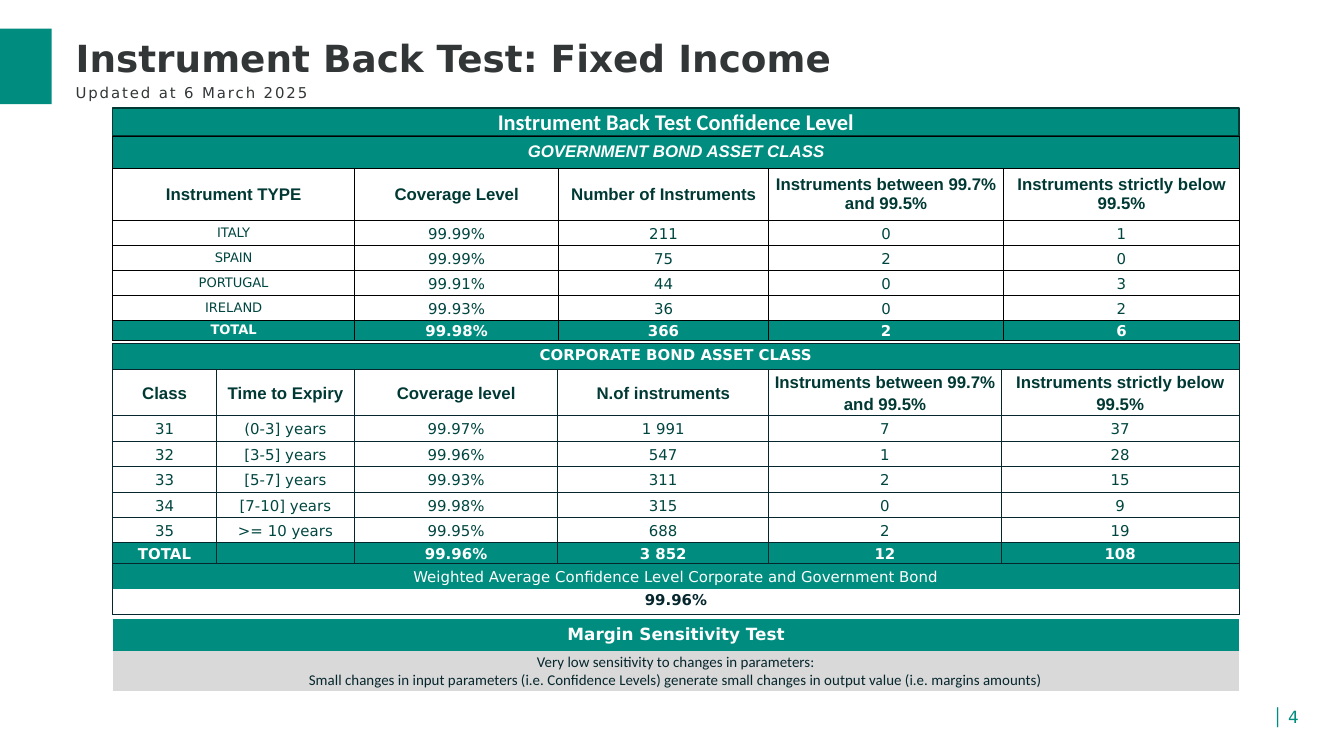
from lxml.etree import SubElement
from pptx import Presentation
from pptx.dml.color import RGBColor
from pptx.enum.shapes import MSO_SHAPE as Shape
from pptx.enum.text import MSO_ANCHOR as Anchor, PP_ALIGN as Align
from pptx.oxml.ns import qn
from pptx.util import Cm, Pt

color = RGBColor.from_string
TEAL, DARK_TEAL, BODY, NAVY = "008D7F", "003934", "004640", "06262D"
WHITE, GRAY, CHARCOAL = "FFFFFF", "D9D9D9", "323637"
SANS = "DejaVu Sans"
LEFT, WIDTH = 2.13, 21.29

presentation = Presentation()
presentation.slide_width, presentation.slide_height = Cm(25.4), Cm(14.29)
slide = presentation.slides.add_slide(presentation.slide_layouts[6])


def write(holder, frame, text, style):
    """Fill a text frame; holder (frame or cell) carries margins and anchor."""
    side = Cm(style.get("margin", 0))
    layout = {"margin_left": side, "margin_right": side, "margin_top": 0,
              "margin_bottom": 0,
              "vertical_anchor": style.get("anchor", Anchor.MIDDLE)}
    for name, value in layout.items():
        setattr(holder, name, value)
    frame.word_wrap = True
    for index, line in enumerate(text.split("\n")):
        paragraph = frame.add_paragraph() if index else frame.paragraphs[0]
        paragraph.alignment = style.get("align", Align.CENTER)
        if "spacing" in style:
            paragraph.line_spacing = style["spacing"]
        if not line:
            # Keeps an empty cell from growing its row
            SubElement(paragraph._p, qn("a:endParaRPr"), sz=str(style["size"] * 100))
            continue
        run = paragraph.add_run()
        run.text = line
        formats = {"size": Pt(style["size"]), "name": style.get("font", SANS),
                   "bold": style.get("bold", False), "italic": style.get("italic", False)}
        for name, value in formats.items():
            setattr(run.font, name, value)
        run.font.color.rgb = color(style["color"])
        if "tracking" in style:
            run._r.get_or_add_rPr().set("spc", str(style["tracking"]))


def add_table(top, widths, rows, border=None):
    """Rows are (height, first style, other style, fill, bordered sides, texts)."""
    height = sum(row[0] for row in rows)
    table = slide.shapes.add_table(len(rows), len(widths), Cm(LEFT), Cm(top),
                                   Cm(WIDTH), Cm(height)).table
    table.first_row = table.horz_banding = False
    for column, width in zip(table.columns, widths):
        column.width = Cm(width)
    for row_index, (height, first, other, fill, sides, texts) in enumerate(rows):
        table.rows[row_index].height = Cm(height)
        for column_index in range(len(widths)):
            cell = table.cell(row_index, column_index)
            properties = cell._tc.get_or_add_tcPr()
            for side in "LRTB":
                line = SubElement(properties, qn(f"a:ln{side}"), w=str(Pt(0.5)))
                if border and side in sides:
                    solid = SubElement(line, qn("a:solidFill"))
                    SubElement(solid, qn("a:srgbClr"), val=border)
                else:
                    SubElement(line, qn("a:noFill"))
            if fill:
                cell.fill.solid()
                cell.fill.fore_color.rgb = color(fill)
            else:
                cell.fill.background()
            if column_index < len(texts):
                write(cell, cell.text_frame, texts[column_index],
                      other if column_index else first)
        if len(texts) < len(widths):
            table.cell(row_index, 0).merge(table.cell(row_index, len(widths) - 1))


# Accent block and table heading bar
heading = {"size": 12, "font": "Calibri", "color": WHITE, "bold": True}
for left, top, width, height, text in [
        (0, 0.54, 0.98, 1.43, ""),
        (LEFT, 2.04, WIDTH, 0.53, "Instrument Back Test Confidence Level")]:
    shape = slide.shapes.add_shape(Shape.RECTANGLE, Cm(left), Cm(top), Cm(width), Cm(height))
    shape.shadow.inherit = False
    shape.fill.solid()
    shape.fill.fore_color.rgb = color(TEAL)
    if text:
        shape.line.color.rgb = color(DARK_TEAL)
        shape.line.width = Pt(0.75)
        write(shape.text_frame, shape.text_frame, text, heading)
    else:
        shape.line.fill.background()

# Title, date and page number
title = {"size": 20, "color": CHARCOAL, "bold": True, "align": Align.LEFT}
date = {"size": 8, "color": CHARCOAL, "tracking": 100, "align": Align.LEFT}
page = {"size": 9, "color": TEAL, "anchor": Anchor.TOP}
for left, top, width, height, text, style in [
        (1.43, 0.69, 22.5, 0.8, "Instrument Back Test: Fixed Income", title),
        (1.43, 1.45, 6, 0.6, "Updated at 6 March 2025", date),
        (23.65, 13.36, 1.3, 0.38, "│ 4", page)]:
    box = slide.shapes.add_textbox(Cm(left), Cm(top), Cm(width), Cm(height))
    write(box.text_frame, box.text_frame, text, style)

# Cell styles
header = {"size": 9, "font": "Arial", "color": DARK_TEAL, "bold": True, "margin": 0.04}
banner = {**header, "color": WHITE, "italic": True}
spaced_header = {**header, "spacing": 1.15}
country = {"size": 7, "color": BODY, "margin": 0.03}
value = {"size": 8, "color": BODY, "margin": 0.13, "spacing": 1.15}
total = {**value, "color": WHITE, "bold": True}
total_label = {**country, "color": WHITE, "bold": True}
top_total = {**total, "anchor": Anchor.TOP}
weighted = {**total, "bold": False}
average = {**top_total, "color": NAVY}

# Government bonds
countries = [
    ("ITALY", "99.99%", "211", "0", "1"),
    ("SPAIN", "99.99%", "75", "2", "0"),
    ("PORTUGAL", "99.91%", "44", "0", "3"),
    ("IRELAND", "99.93%", "36", "0", "2"),
]
ranges = ("Instruments between 99.7% and 99.5%", "Instruments strictly below 99.5%")
add_table(2.57, [4.57, 3.86, 3.96, 4.45, 4.45], [
    (0.61, banner, banner, TEAL, "LRTB", ["GOVERNMENT BOND ASSET CLASS"]),
    (0.99, header, header, None, "LRTB",
     ["Instrument TYPE", "Coverage Level", "Number of Instruments", *ranges]),
    *[(0.47, country, value, None, "LRTB", texts) for texts in countries],
    (0.38, total_label, top_total, TEAL, "LRTB", ["TOTAL", "99.98%", "366", "2", "6"]),
], "000000")

# Corporate bonds
classes = [
    ("31", "(0-3] years", "99.97%", "1 991", "7", "37"),
    ("32", "[3-5] years", "99.96%", "547", "1", "28"),
    ("33", "[5-7] years", "99.93%", "311", "2", "15"),
    ("34", "[7-10] years", "99.98%", "315", "0", "9"),
    ("35", ">= 10 years", "99.95%", "688", "2", "19"),
]
add_table(6.5, [1.96, 2.61, 3.84, 3.99, 4.39, 4.5], [
    (0.48, top_total, top_total, TEAL, "LRTB", ["CORPORATE BOND ASSET CLASS"]),
    (0.84, spaced_header, spaced_header, None, "LRTB",
     ["Class", "Time to Expiry", "Coverage level", "N.of instruments", *ranges]),
    *[(0.48, value, value, None, "LRTB", texts) for texts in classes],
    (0.38, total, total, TEAL, "LRTB", ["TOTAL", "", "99.96%", "3 852", "12", "108"]),
    (0.48, weighted, weighted, TEAL, "LRT",
     ["Weighted Average Confidence Level Corporate and Government Bond"]),
    (0.48, average, average, None, "LRB", ["99.96%"]),
], NAVY)

# Margin sensitivity
sensitivity = {"size": 9, "color": WHITE, "bold": True}
remark = {"size": 8, "font": "Calibri", "color": NAVY}
add_table(11.7, [WIDTH], [
    (0.6, sensitivity, sensitivity, TEAL, "", ["Margin Sensitivity Test"]),
    (0.77, remark, remark, GRAY, "",
     ["Very low sensitivity to changes in parameters:\n"
      "Small changes in input parameters (i.e. Confidence Levels) generate "
      "small changes in output value (i.e. margins amounts)"]),
])

presentation.save("out.pptx")
